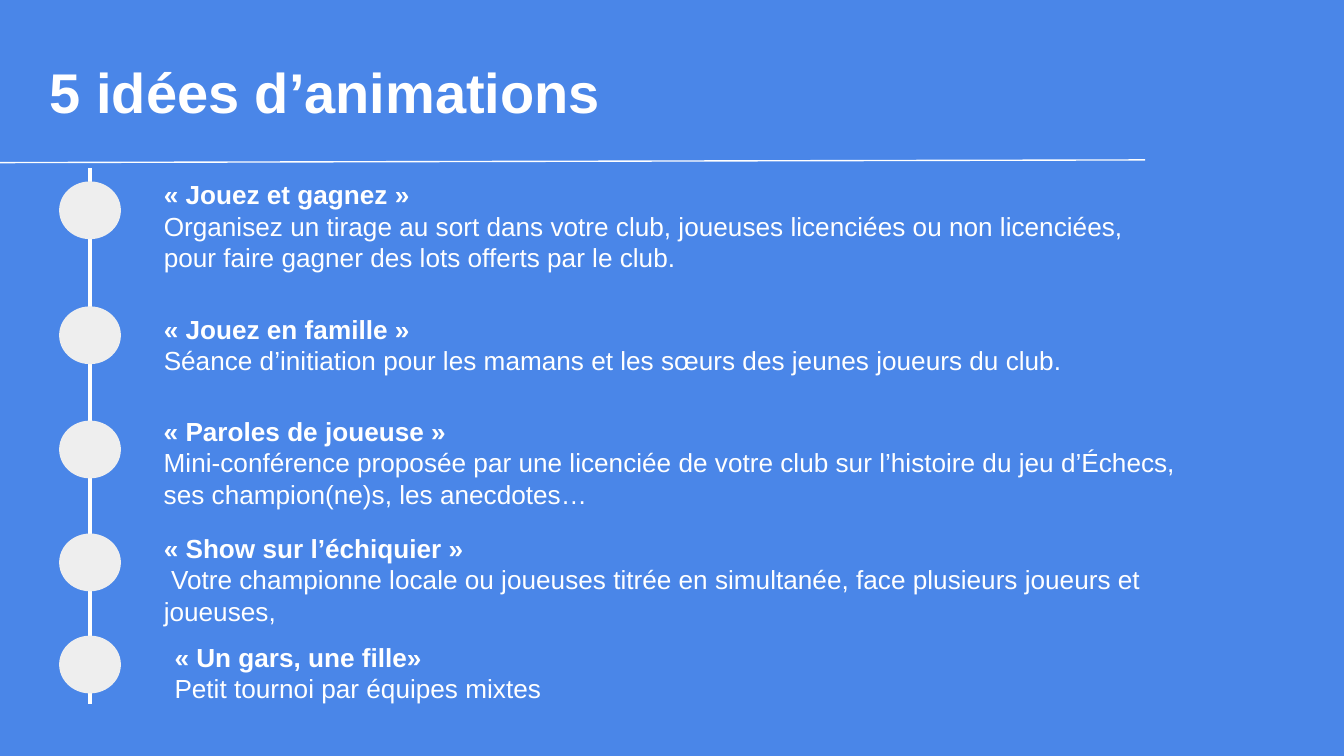
from pptx import Presentation
from pptx.dml.color import RGBColor
from pptx.enum.shapes import MSO_CONNECTOR, MSO_SHAPE
from pptx.enum.text import MSO_ANCHOR, MSO_AUTO_SIZE, PP_ALIGN
from pptx.oxml.ns import qn
from pptx.util import Inches, Pt
from lxml import etree

STRAIGHT = MSO_CONNECTOR.STRAIGHT
OVAL = MSO_SHAPE.OVAL
TOP = MSO_ANCHOR.TOP
NO_FIT = MSO_AUTO_SIZE.NONE
LEFT = PP_ALIGN.LEFT

TITLE = "5 idées d’animations"
IDEAS = [
    {"heading": "« Jouez et gagnez »",
     "lines": ["Organisez un tirage au sort dans votre club, joueuses licenciées ou non licenciées,",
               "pour faire gagner des lots offerts par le club."],
     "box": (1.12, 1.23, 7.52, 1.22), "dot_top": 1.35},
    {"heading": "« Jouez en famille »",
     "lines": ["Séance d’initiation pour les mamans et les sœurs des jeunes joueurs du club."],
     "box": (1.12, 2.23, 7.29, 0.43), "dot_top": 2.28},
    {"heading": "« Paroles de joueuse »",
     "lines": ["Mini-conférence proposée par une licenciée de votre club sur l’histoire du jeu d’Échecs,",
               "ses champion(ne)s, les anecdotes…"],
     "box": (1.12, 2.99, 7.87, 1.06), "dot_top": 3.13},
    {"heading": "« Show sur l’échiquier »",
     "lines": [" Votre championne locale ou joueuses titrée en simultanée, "
               "face plusieurs joueurs et joueuses,"],
     "box": (1.12, 3.86, 7.99, 0.81), "dot_top": 3.97},
    {"heading": "« Un gars, une fille»",
     "lines": ["Petit tournoi par équipes mixtes"],
     "box": (1.2, 4.67, 7.45, 0.69), "dot_top": 4.73},
]

THEME = {
    "font": "Arial",
    "title_size": 30,
    "text_size": 14,
    "background": RGBColor(0x4A, 0x86, 0xE8),
    "text": RGBColor(0xFF, 0xFF, 0xFF),
    "dot": RGBColor(0xEE, 0xEE, 0xEE),
}
FRAME = {
    "word_wrap": True,
    "auto_size": NO_FIT,
    "vertical_anchor": TOP,
    "margin_left": Inches(0.1),
    "margin_top": Inches(0.1),
    "margin_right": Inches(0.1),
    "margin_bottom": Inches(0.1),
}
PAGE_WIDTH = Inches(10)
PAGE_HEIGHT = PAGE_WIDTH * 9 // 16
TITLE_BOX = (0.27, 0.33, 7.4, 0.61)
AXIS_X = 0.67
DOT_WIDTH, DOT_HEIGHT = 0.46, 0.43
RULES = [
    ((0, 1.21), (8.52, 1.19), 0.75),
    ((AXIS_X, 1.25), (AXIS_X, 5.24), 2.25),
]


def apply(target, values):
    for name, value in values.items():
        setattr(target, name, value)


def write(frame, lines, size):
    apply(frame, FRAME)
    for index, line in enumerate(lines):
        para = frame.paragraphs[0] if index == 0 else frame.add_paragraph()
        apply(para, {"alignment": LEFT, "line_spacing": 1.0,
                     "space_before": Pt(0), "space_after": Pt(0)})
        span = para.add_run()
        span.text = line
        apply(span.font, {"name": THEME["font"], "size": Pt(size), "bold": index == 0})
        span.font.color.rgb = THEME["text"]


def add_rule(page, start, end, width):
    rule = page.shapes.add_connector(STRAIGHT, *map(Inches, start + end))
    rule.line.color.rgb = THEME["text"]
    rule.line.width = Pt(width)
    etree.SubElement(rule._element.spPr, qn("a:effectLst"))


def add_dot(page, top):
    dot = page.shapes.add_shape(
        OVAL, *map(Inches, (AXIS_X - DOT_WIDTH / 2, top, DOT_WIDTH, DOT_HEIGHT)))
    dot.shadow.inherit = False
    dot.fill.solid()
    dot.fill.fore_color.rgb = THEME["dot"]
    dot.line.fill.background()


deck = Presentation()
apply(deck, {"slide_width": PAGE_WIDTH, "slide_height": PAGE_HEIGHT})
page = deck.slides.add_slide(deck.slide_layouts.get_by_name("Title Only"))
page.background.fill.solid()
page.background.fill.fore_color.rgb = THEME["background"]

title = page.shapes.title
apply(title, dict(zip(("left", "top", "width", "height"), map(Inches, TITLE_BOX))))
write(title.text_frame, [TITLE], THEME["title_size"])

for idea in IDEAS:
    box = page.shapes.add_textbox(*map(Inches, idea["box"]))
    write(box.text_frame, [idea["heading"], *idea["lines"]], THEME["text_size"])
for start, end, width in RULES:
    add_rule(page, start, end, width)
for idea in IDEAS:
    add_dot(page, idea["dot_top"])

deck.save("out.pptx")
